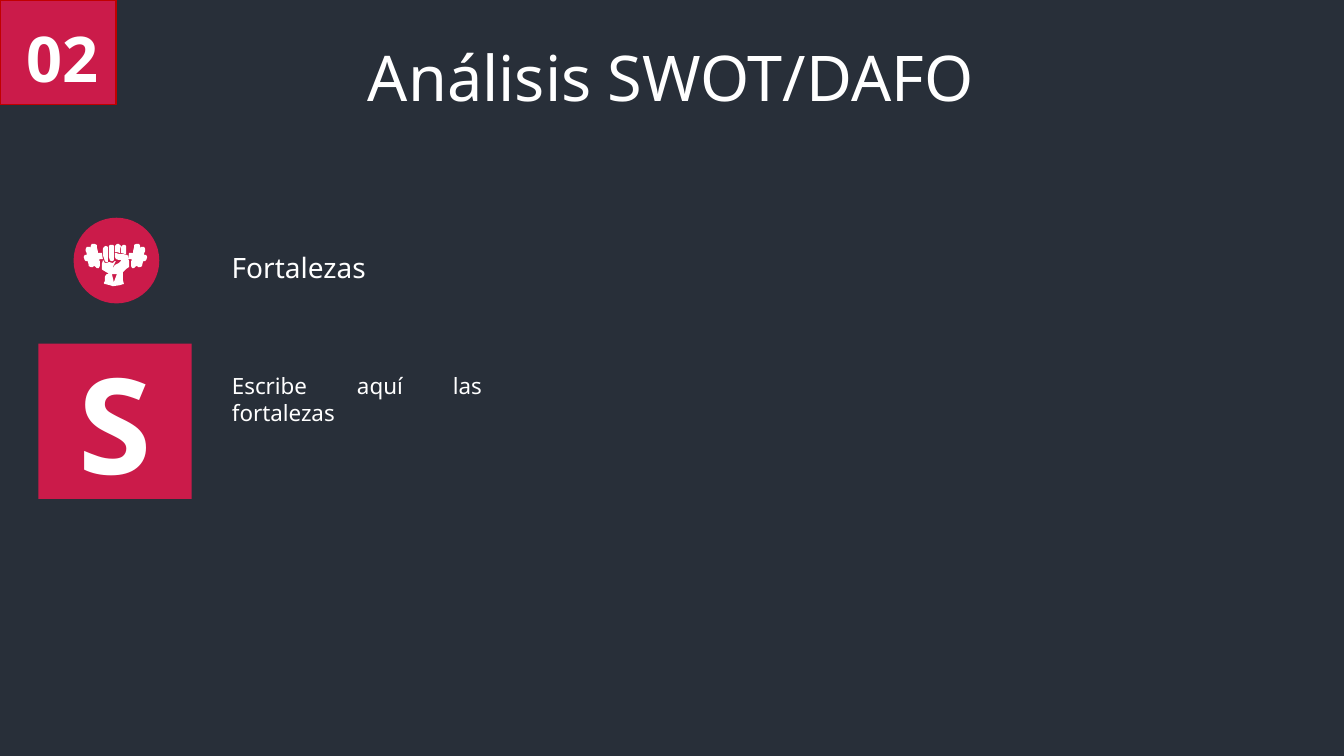
from lxml.etree import SubElement
from pptx import Presentation
from pptx.dml.color import RGBColor
from pptx.enum.shapes import MSO_SHAPE as Shape
from pptx.enum.text import MSO_ANCHOR as Anchor, MSO_AUTO_SIZE as AutoSize, PP_ALIGN as Align
from pptx.oxml.ns import qn
from pptx.util import Inches, Pt

MIRROR_SUM = 229  # left and right weight x values add up to this

# Icon outlines, in hundredths of an inch on the slide
FIST = [(128, 259), (127, 256), (127, 254), (126, 253), (122, 252), (118, 252), (115, 251),
        (114, 251), (114, 255), (115, 257), (118, 258), (120, 258), (120, 259), (119, 260),
        (118, 261), (114, 263), (112, 266), (112, 265), (114, 261), (115, 259), (114, 259),
        (112, 261), (108, 260), (106, 261), (104, 261), (103, 259), (102, 258), (102, 259),
        (101, 262), (101, 267), (102, 268), (107, 271), (108, 272), (106, 272), (105, 273),
        (104, 275), (104, 279), (103, 281), (104, 282), (105, 282), (109, 283), (112, 284),
        (119, 283), (122, 282), (123, 282), (122, 278), (122, 270), (123, 269), (125, 267),
        (128, 265), (128, 263)]
WRIST_GAP = [(113, 280), (111, 272), (116, 272)]
LEFT_WEIGHT = [(99, 261), (99, 259), (98, 258), (99, 257), (102, 257), (101, 251), (97, 251),
               (97, 249), (96, 245), (96, 243), (94, 242), (91, 242), (90, 244), (90, 246),
               (89, 245), (86, 245), (85, 247), (85, 249), (86, 251), (86, 253), (84, 253),
               (83, 255), (84, 258), (85, 259), (87, 259), (88, 263), (88, 264), (90, 265),
               (92, 265), (93, 264), (94, 264), (96, 266), (98, 266), (99, 264)]
RIGHT_WEIGHT = [(MIRROR_SUM - x, y) for x, y in LEFT_WEIGHT]
FINGERS = [
    [(109, 258), (110, 259), (112, 259), (113, 258), (113, 244), (112, 243), (109, 243),
     (108, 244), (108, 255)],
    [(102, 248), (102, 253), (103, 256), (104, 259), (105, 260), (107, 260), (107, 258),
     (107, 245), (105, 244), (103, 245), (102, 247)],
    [(114, 250), (116, 250), (119, 251), (119, 247), (120, 244), (119, 243), (118, 242),
     (116, 242), (114, 244)],
    [(120, 251), (121, 251), (124, 252), (125, 252), (125, 244), (124, 243), (122, 243),
     (120, 245)],
]


def color(code):
    return RGBColor.from_string(code)


class SwotSlide:
    CRIMSON, WHITE, NIGHT, BORDER = "CB1B4A", "FFFFFF", "282F39", "C00000"
    FONT, BADGE_FONT = "Noto Sans", "Open Sans"

    def __init__(self, deck):
        layout = deck.slide_layouts.get_by_name("Title and Content")
        self.page = deck.slides.add_slide(layout)
        self.page.background.fill.solid()
        self.page.background.fill.fore_color.rgb = color(self.NIGHT)

    def label(self, box, text, size, align=Align.LEFT, anchor=Anchor.TOP, font=FONT, bold=False):
        frame = box.text_frame
        frame.word_wrap = True
        frame.auto_size = AutoSize.NONE
        frame.vertical_anchor = anchor
        para = frame.paragraphs[0]
        para.alignment = align
        span = para.add_run()
        span.text = text
        span.font.name = font
        span.font.size = Pt(size)
        span.font.bold = bold
        span.font.color.rgb = color(self.WHITE)
        return para

    def paint(self, shape, fill=None, line=None, width=1):
        shape.shadow.inherit = False
        if fill:
            shape.fill.solid()
            shape.fill.fore_color.rgb = color(fill)
        else:
            shape.fill.background()
        if line:
            shape.line.color.rgb = color(line)
            shape.line.width = Pt(width)
        else:
            shape.line.fill.background()

    def block(self, kind, area, **look):
        shape = self.page.shapes.add_shape(kind, *map(Inches, area))
        self.paint(shape, **look)
        return shape

    def outline(self, first, *holes):
        builder = self.page.shapes.build_freeform(*first[0], scale=Inches(0.01))
        builder.add_line_segments(first[1:], close=True)
        for hole in holes:
            builder.move_to(*hole[0])
            builder.add_line_segments(hole[1:], close=True)
        self.paint(builder.convert_to_shape(), self.WHITE)

    def text(self, area, words, size):
        self.label(self.page.shapes.add_textbox(*map(Inches, area)), words, size)

    def placeholder(self, index, area, words, size, align):
        box = self.page.placeholders[index]
        box.left, box.top, box.width, box.height = map(Inches, area)
        return self.label(box, words, size, align)

    def title(self, area, words, size):
        self.placeholder(0, area, words, size, Align.CENTER)

    def body(self, area, words, size):
        para = self.placeholder(1, area, words, size, Align.JUSTIFY)
        para.space_before = Pt(0)
        props = para._p.get_or_add_pPr()
        props.set("marL", "0")
        props.set("indent", "0")
        SubElement(props, qn("a:buNone"))


def main():
    deck = Presentation()
    deck.slide_width, deck.slide_height = Inches(13.33), Inches(7.5)
    slide = SwotSlide(deck)

    letter = slide.block(Shape.RECTANGLE, (0.38, 3.41, 1.52, 1.54), fill=slide.CRIMSON)
    slide.label(letter, "S", 95, Align.CENTER, Anchor.MIDDLE, bold=True)

    slide.block(Shape.OVAL, (0.73, 2.16, 0.85, 0.85), fill=slide.CRIMSON)
    slide.outline(FIST, WRIST_GAP)
    for part in (LEFT_WEIGHT, RIGHT_WEIGHT, *FINGERS):
        slide.outline(part)

    slide.block(Shape.RECTANGLE, (0, 0, 1.15, 1.04), fill=slide.CRIMSON, line=slide.BORDER)
    number = slide.block(Shape.RECTANGLE, (0.09, 0.14, 1.05, 0.86), line=slide.CRIMSON, width=0.75)
    slide.label(number, "02", 45, Align.CENTER, font=slide.BADGE_FONT, bold=True)

    slide.text((2.2, 2.44, 1.87, 0.44), "Fortalezas", 20)
    slide.body((2.2, 3.64, 2.68, 0.37), "Escribe aquí las fortalezas", 16)
    slide.title((3.54, 0.33, 6.22, 0.86), "Análisis SWOT/DAFO", 45)
    deck.save("out.pptx")


if __name__ == "__main__":
    main()
